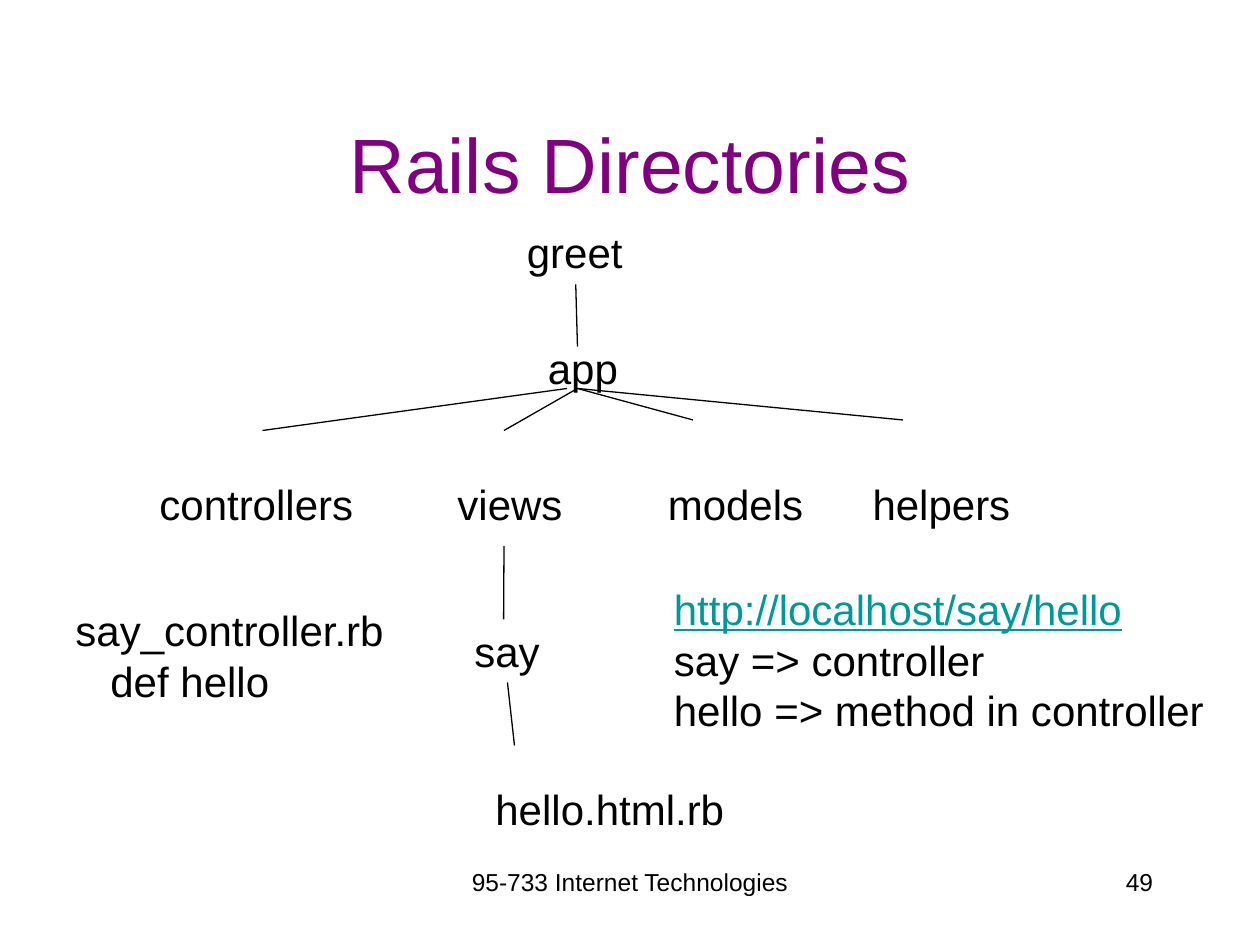
from lxml.etree import SubElement
from pptx import Presentation
from pptx.dml.color import RGBColor
from pptx.enum.shapes import MSO_CONNECTOR as Connector
from pptx.enum.text import MSO_ANCHOR as Anchor, PP_ALIGN as Align
from pptx.oxml.ns import qn
from pptx.util import Pt

BLACK, PURPLE, TEAL = "000000", "800080", "009999"

# Title and footer: text, box, size, colour, alignment, anchor
FRAME = [
    ("95-733 Internet Technologies", (246, 492, 228, 36), 14, BLACK, Align.CENTER, Anchor.TOP),
    ("49", (516, 492, 150, 36), 14, BLACK, Align.RIGHT, Anchor.TOP),
    ("Rails Directories", (54, 48, 612, 90), 44, PURPLE, Align.CENTER, Anchor.MIDDLE),
]

# Directory tree: text, box
TREE = [
    ("greet", (294, 126, 70, 36.4)),
    ("app", (306, 192, 55, 36.4)),
    ("say", (264, 354, 52.6, 36.4)),
    ("hello.html.rb", (276, 444, 146, 36.4)),
]
APP_FOLDERS = ["controllers", "views", "models", "helpers"]
FOLDER_TABS = [170.3, 290.5, 407.5]
FOLDER_BOX = (84, 270, 511, 36.4)

# Branches: start x, y, end x, y
BRANCHES = [
    (324, 222, 150, 246),
    (330, 222, 288, 246),
    (330, 222, 396, 240),
    (330, 222, 516, 240),
    (329, 162.5, 330, 198),
    (288, 312, 287.8, 354),
    (290, 390, 294, 426),
]

# Notes: lines of text, colour, underline, indent
CONTROLLER = [("say_controller.rb", BLACK, False, 0), ("def hello", BLACK, False, 20)]
CONTROLLER_BOX = (36, 342, 192, 65.5)
ROUTE = [
    ("http://localhost/say/hello", TEAL, True, 0),
    ("say => controller", BLACK, False, 0),
    ("hello => method in controller", BLACK, False, 0),
]
ROUTE_BOX = (378, 330, 320.4, 94.3)


def rgb(value):
    return RGBColor.from_string(value)


def add_text(slide, lines, box, size=24, align=Align.LEFT, anchor=Anchor.TOP, wrap=False):
    frame = slide.shapes.add_textbox(*map(Pt, box)).text_frame
    frame.word_wrap = wrap
    frame.vertical_anchor = anchor
    for number, (text, color, underline, indent) in enumerate(lines):
        line = frame.add_paragraph() if number else frame.paragraphs[0]
        line.alignment = align
        if indent:
            line._p.get_or_add_pPr().set("marL", str(Pt(indent)))
        run = line.add_run()
        run.text = text
        run.font.name = "Arial"
        run.font.size = Pt(size)
        run.font.color.rgb = rgb(color)
        run.font.underline = underline
    return frame


def add_branch(slide, ends):
    branch = slide.shapes.add_connector(Connector.STRAIGHT, *map(Pt, ends))
    branch.line.color.rgb = rgb(BLACK)
    branch.line.width = Pt(0.75)
    SubElement(branch._element.spPr, qn("a:effectLst"))


def set_tabs(paragraph, positions):
    tabs = SubElement(paragraph._p.get_or_add_pPr(), qn("a:tabLst"))
    for position in positions:
        SubElement(tabs, qn("a:tab"), pos=str(Pt(position)), algn="l")


def main():
    deck = Presentation()
    deck.slide_width, deck.slide_height = Pt(720), Pt(540)
    slide = deck.slides.add_slide(deck.slide_layouts[6])

    # Title and footer
    for text, box, size, color, align, anchor in FRAME:
        add_text(slide, [(text, color, False, 0)], box, size, align, anchor, wrap=True)

    # Directory tree
    for ends in BRANCHES:
        add_branch(slide, ends)
    for text, box in TREE:
        add_text(slide, [(text, BLACK, False, 0)], box)
    folders = add_text(slide, [("\t".join(APP_FOLDERS), BLACK, False, 0)], FOLDER_BOX, wrap=True)
    set_tabs(folders.paragraphs[0], FOLDER_TABS)

    # Controller and route notes
    add_text(slide, CONTROLLER, CONTROLLER_BOX)
    add_text(slide, ROUTE, ROUTE_BOX)

    deck.save("out.pptx")


if __name__ == "__main__":
    main()
